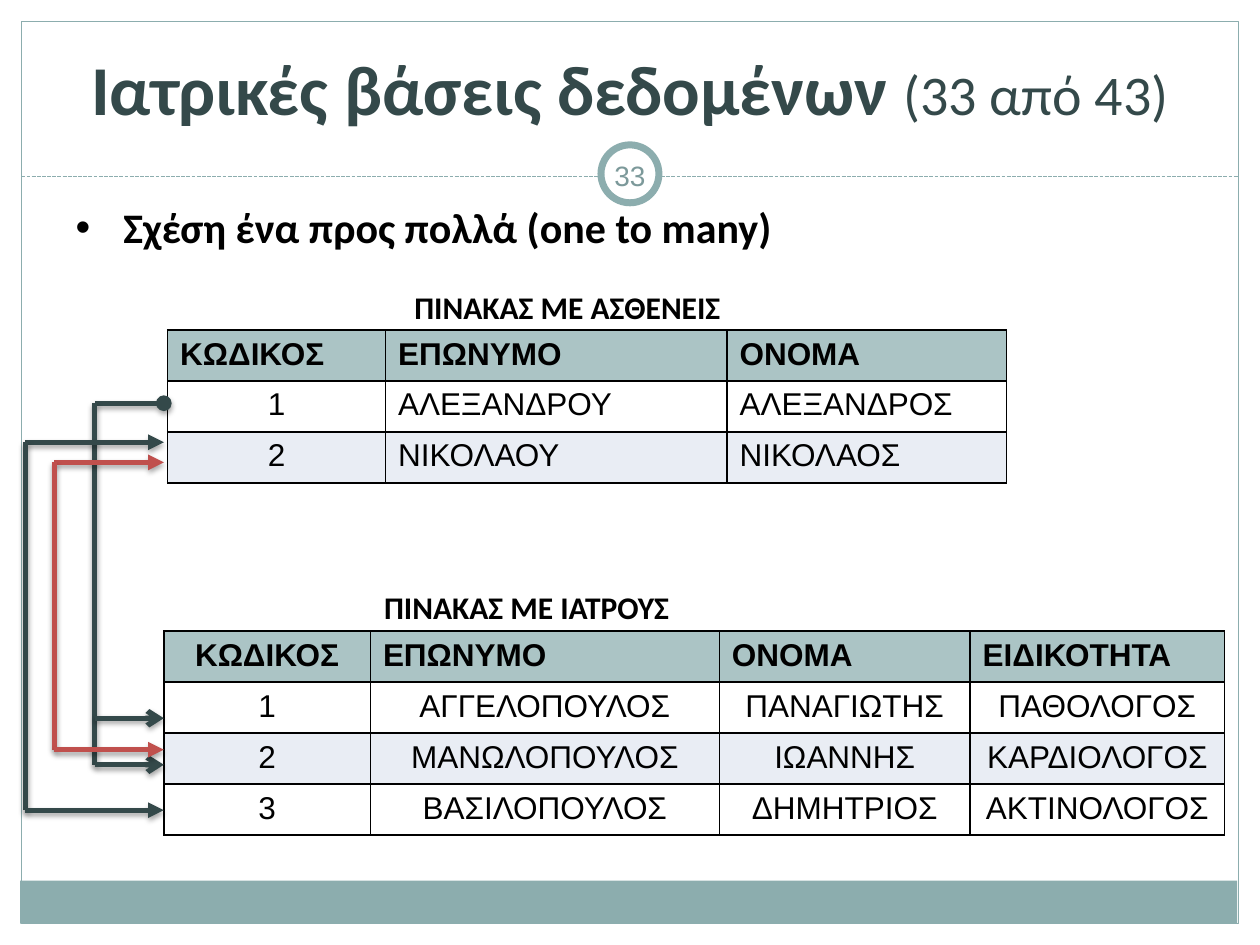
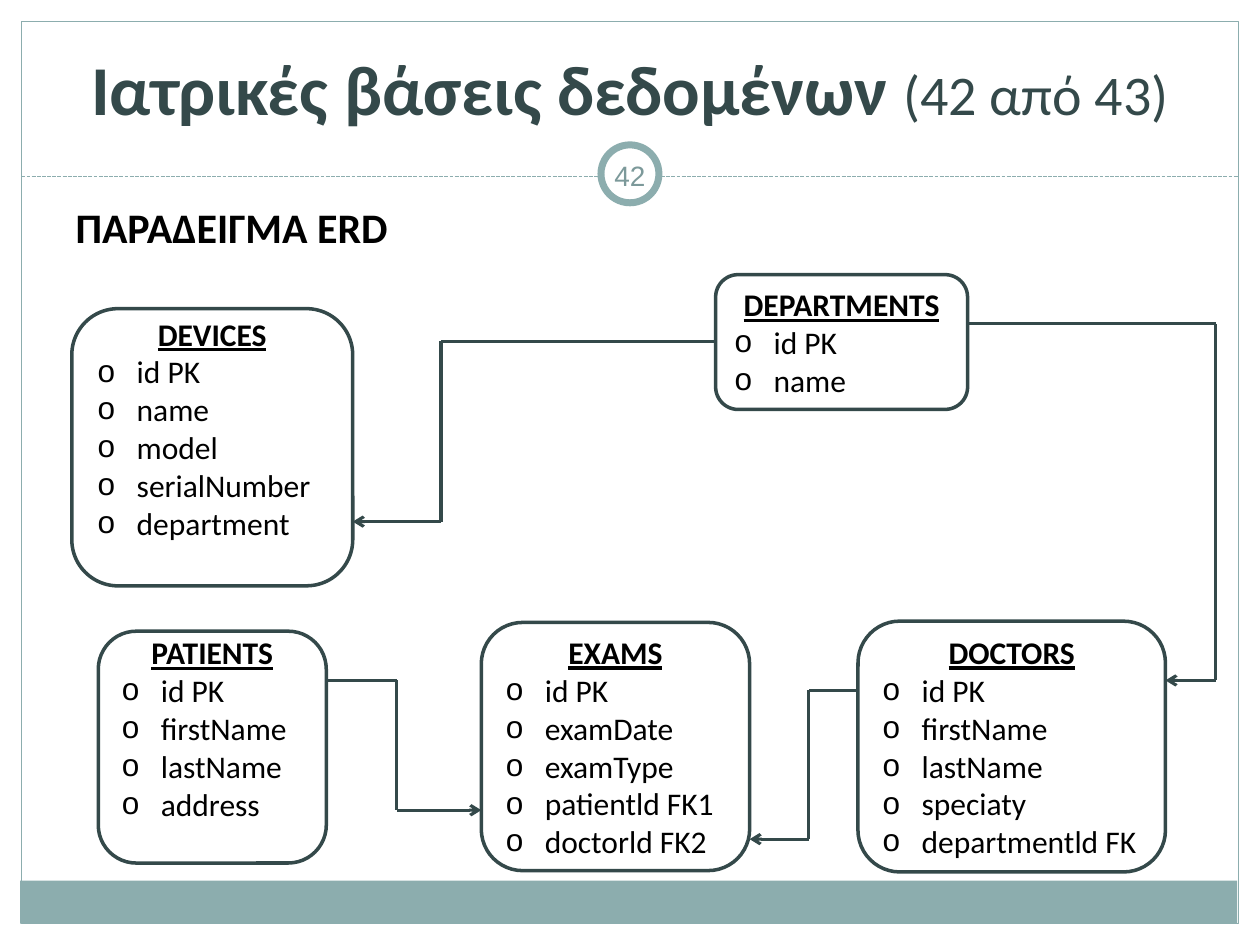
import lxml.etree
import pptx
import pptx.dml.color
import pptx.enum.dml
import pptx.enum.shapes
import pptx.enum.text
import pptx.oxml.ns
import pptx.util

inches, points, qn = pptx.util.Inches, pptx.util.Pt, pptx.oxml.ns.qn
SHAPE = pptx.enum.shapes.MSO_SHAPE
ALIGN = pptx.enum.text.PP_ALIGN
MIDDLE = pptx.enum.text.MSO_ANCHOR.MIDDLE

TEAL, DARK, RED, BLACK, WHITE = "8CADAE", "34494A", "C0504D", "000000", "FFFFFF"
HEADER, STRIPE, NUMBER = "ABC4C5", "E9EDF4", "7C999A"
EDGE, WIDTH, HEIGHT = 0.17, 10, 7.5
ROW_HEIGHT = 0.405
LINE_HEIGHT = 0.305

TITLE = "Ιατρικές βάσεις δεδομένων "
TOTAL = 43

# caption, caption place, table place, column widths, centred header columns, centred data columns, rows
TABLES = [
    ("ΠΙΝΑΚΑΣ ΜΕ ΑΣΘΕΝΕΙΣ", (3.19, 2.24), (1.33, 2.62), (1.73, 2.71, 2.22), 0, 1, [
        ("ΚΩΔΙΚΟΣ", "ΕΠΩΝΥΜΟ", "ΟΝΟΜΑ"),
        ("1", "ΑΛΕΞΑΝΔΡΟΥ", "ΑΛΕΞΑΝΔΡΟΣ"),
        ("2", "ΝΙΚΟΛΑΟΥ", "ΝΙΚΟΛΑΟΣ"),
    ]),
    ("ΠΙΝΑΚΑΣ ΜΕ ΙΑΤΡΟΥΣ", (2.95, 4.62), (1.3, 5.01), (1.64, 2.77, 1.99, 2.02), 1, 4, [
        ("ΚΩΔΙΚΟΣ", "ΕΠΩΝΥΜΟ", "ΟΝΟΜΑ", "ΕΙΔΙΚΟΤΗΤΑ"),
        ("1", "ΑΓΓΕΛΟΠΟΥΛΟΣ", "ΠΑΝΑΓΙΩΤΗΣ", "ΠΑΘΟΛΟΓΟΣ"),
        ("2", "ΜΑΝΩΛΟΠΟΥΛΟΣ", "ΙΩΑΝΝΗΣ", "ΚΑΡΔΙΟΛΟΓΟΣ"),
        ("3", "ΒΑΣΙΛΟΠΟΥΛΟΣ", "ΔΗΜΗΤΡΙΟΣ", "ΑΚΤΙΝΟΛΟΓΟΣ"),
    ]),
]
# x of the shared vertical, y at the patient, y at the doctor, colour, start head, end head
TABLE_X = 1.3
TABLE_LINKS = [
    (0.75, 3.2, 6.07, DARK, "oval", "arrow"),
    (0.43, 3.67, 5.95, RED, "triangle", "triangle"),
    (0.2, 3.51, 6.43, DARK, "triangle", "triangle"),
]
BRANCH = ((0.75, 5.7), (TABLE_X, 5.7))

# entity: place, free lines at the bottom, fields
ENTITIES = {
    "DEVICES": ((0.57, 2.45, 2.23, 2.2), 1,
                ["id PK", "name", "model", "serialNumber", "department"]),
    "DOCTORS": ((6.81, 4.93, 2.44, 1.99), 0,
                ["id PK", "firstName", "lastName", "speciaty", "departmentld FK"]),
    "EXAMS": ((3.82, 4.94, 2.13, 1.97), 0,
              ["id PK", "examDate", "examType", "patientld FK1", "doctorld FK2"]),
    "PATIENTS": ((0.78, 5.01, 1.81, 1.84), 1,
                 ["id PK", "firstName", "lastName", "address"]),
    "DEPARTMENTS": ((5.68, 2.18, 2, 1.07), 0, ["id PK", "name"]),
}
# source, its side, y; x of the vertical; target, its side, y
RELATIONS = [
    ("DEPARTMENTS", "right", 2.57, 9.65, "DOCTORS", "right", 5.4),
    ("DEPARTMENTS", "left", 2.71, 3.5, "DEVICES", "right", 4.14),
    ("PATIENTS", "right", 5.4, 3.15, "EXAMS", "left", 6.43),
    ("DOCTORS", "left", 5.48, 6.42, "EXAMS", "right", 6.66),
]


def rgb(hex_string):
    return pptx.dml.color.RGBColor.from_string(hex_string)


def place(shape, *box):
    shape.left, shape.top, shape.width, shape.height = map(inches, box)


def sub(parent, tag, **attributes):
    return lxml.etree.SubElement(parent, qn(tag), attributes)


def style(font, size, color=BLACK, bold=False, name="Calibri"):
    font.size, font.bold, font.name = points(size), bold, name
    font.color.rgb = rgb(color)


def set_bullet(paragraph, char=None, indent=0.0):
    properties = paragraph._p.get_or_add_pPr()
    properties.set("marL", str(inches(indent)))
    properties.set("indent", str(-inches(indent)))
    if char:
        sub(properties, "a:buFont", typeface="Arial")
        sub(properties, "a:buChar", char=char)
    else:
        sub(properties, "a:buNone")


def add_preset(slide, preset, box, fill=None, line=None, width=1.0):
    shape = slide.shapes.add_shape(preset, *map(inches, box))
    shape.shadow.inherit = False
    if fill:
        shape.fill.solid()
        shape.fill.fore_color.rgb = rgb(fill)
    else:
        shape.fill.background()
    if line:
        shape.line.color.rgb = rgb(line)
        shape.line.width = points(width)
    else:
        shape.line.fill.background()
    return shape


def add_line(slide, start, end, color, width, head=None, tail=None, shadow=False):
    connector = slide.shapes.add_connector(
        pptx.enum.shapes.MSO_CONNECTOR.STRAIGHT, *map(inches, start + end))
    connector.line.color.rgb = rgb(color)
    connector.line.width = points(width)
    for tag, kind in (("a:headEnd", head), ("a:tailEnd", tail)):
        if kind:
            sub(connector.line._get_or_add_ln(), tag, type=kind)
    effects = sub(connector._element.spPr, "a:effectLst")
    if shadow:
        outer = sub(effects, "a:outerShdw", blurRad=str(points(3.1)), dist=str(points(1.8)),
                    dir="5400000", rotWithShape="0")
        sub(sub(outer, "a:srgbClr", val=BLACK), "a:alpha", val="35000")
    return connector


def add_elbow(slide, start, bus_x, end, color, width, head=None, tail=None, shadow=False):
    """Join two points by way of a vertical line at bus_x."""
    upper, lower = (bus_x, start[1]), (bus_x, end[1])
    add_line(slide, start, upper, color, width, head=head, shadow=shadow)
    add_line(slide, upper, lower, color, width, shadow=shadow)
    add_line(slide, lower, end, color, width, tail=tail, shadow=shadow)


def add_base_slide(deck, number, heading, bullet=None, indent=0.0):
    slide = deck.slides.add_slide(deck.slide_layouts[1])
    add_preset(slide, SHAPE.RECTANGLE, (0.16, 6.99, 9.66, 0.34), fill=TEAL)
    add_preset(slide, SHAPE.RECTANGLE, (EDGE, EDGE, WIDTH - 2 * EDGE, HEIGHT - 2 * EDGE),
               line=TEAL, width=0.75)
    divider = add_line(slide, (EDGE, 1.4), (WIDTH - EDGE, 1.4), TEAL, 0.75)
    divider.line.dash_style = pptx.enum.dml.MSO_LINE.SQUARE_DOT
    add_preset(slide, SHAPE.OVAL, (4.77, 1.15, 0.46, 0.46), WHITE, TEAL, 4)

    badge = slide.shapes.add_textbox(*map(inches, (4.75, 1.15, 0.5, 0.48))).text_frame
    badge.word_wrap, badge.vertical_anchor = True, MIDDLE
    badge.margin_left = badge.margin_right = inches(0.05)
    badge.text = str(number)
    badge.paragraphs[0].alignment = ALIGN.CENTER
    style(badge.paragraphs[0].runs[0].font, 16, NUMBER, name="Arial")

    title, body = slide.placeholders
    place(title, 0.5, 0.2, 9, 0.99)
    place(body, 0.5, 1.55, 9, 5.35)
    for holder in (title, body):
        holder.text_frame.auto_size = pptx.enum.text.MSO_AUTO_SIZE.NONE
    title.text_frame.text = TITLE
    title.text_frame.vertical_anchor = MIDDLE
    line = title.text_frame.paragraphs[0]
    line.alignment = ALIGN.CENTER
    line.add_run().text = f"({number} από {TOTAL})"
    style(line.runs[0].font, 40, DARK, True)
    style(line.runs[1].font, 32, DARK)

    body.text_frame.text = heading
    opening = body.text_frame.paragraphs[0]
    set_bullet(opening, bullet, indent)
    opening.space_before = points(0)
    style(opening.runs[0].font, 24, bold=True)
    return slide


def border_cell(cell):
    properties = cell._tc.get_or_add_tcPr()
    for index, side in enumerate(("a:lnL", "a:lnR", "a:lnT", "a:lnB")):
        line = sub(properties, side, w=str(points(1)))
        sub(sub(line, "a:solidFill"), "a:srgbClr", val=BLACK)
        properties.insert(index, line)


def add_captioned_table(slide, caption, caption_at, table_at, widths,
                        centred_heads, centred_data, rows):
    label = slide.shapes.add_textbox(*map(inches, caption_at + (3.5, 0.4))).text_frame
    label.word_wrap = True
    label.text = caption
    style(label.paragraphs[0].runs[0].font, 18, bold=True)

    table = slide.shapes.add_table(
        len(rows), len(widths),
        *map(inches, table_at + (sum(widths), ROW_HEIGHT * len(rows)))).table
    table.first_row = table.horz_banding = False
    for column, width in zip(table.columns, widths):
        column.width = inches(width)
    for r, row in enumerate(rows):
        table.rows[r].height = inches(ROW_HEIGHT)
        for c, value in enumerate(row):
            cell = table.cell(r, c)
            cell.text = value
            paragraph = cell.text_frame.paragraphs[0]
            centred = centred_data if r else centred_heads
            paragraph.alignment = ALIGN.CENTER if c < centred else ALIGN.LEFT
            style(paragraph.runs[0].font, 18, bold=r == 0, name="Arial")
            cell.fill.solid()
            cell.fill.fore_color.rgb = rgb(HEADER if r == 0 else WHITE if r % 2 else STRIPE)
            border_cell(cell)


def add_entity(slide, name, box, free_lines, fields):
    frame = add_preset(slide, SHAPE.ROUNDED_RECTANGLE, box, line=DARK, width=2).text_frame
    frame.word_wrap, frame.vertical_anchor = True, MIDDLE
    frame.margin_bottom = inches(0.05 + free_lines * LINE_HEIGHT)
    frame.text = "\n".join([name] + fields)
    heading, *items = frame.paragraphs
    heading.alignment = ALIGN.CENTER
    style(heading.runs[0].font, 18, bold=True)
    heading.runs[0].font.underline = True
    for item in items:
        item.alignment = ALIGN.LEFT
        set_bullet(item, "o", 0.31)
        style(item.runs[0].font, 18)


def side_x(entity, side):
    left, _, width, _ = ENTITIES[entity][0]
    return left + (width if side == "right" else 0)


def main():
    deck = pptx.Presentation()
    deck.slide_width, deck.slide_height = inches(WIDTH), inches(HEIGHT)

    one_to_many = add_base_slide(deck, 33, "Σχέση ένα προς πολλά (one to many)", "•", 0.38)
    for table in TABLES:
        add_captioned_table(one_to_many, *table)
    for bus_x, patient_y, doctor_y, color, head, tail in TABLE_LINKS:
        add_elbow(one_to_many, (TABLE_X, patient_y), bus_x, (TABLE_X, doctor_y),
                  color, 3, head, tail, shadow=True)
    add_line(one_to_many, *BRANCH, DARK, 3, tail="arrow", shadow=True)

    diagram = add_base_slide(deck, 42, "ΠΑΡΑΔΕΙΓΜΑ ERD")
    for name, entity in ENTITIES.items():
        add_entity(diagram, name, *entity)
    for source, source_side, source_y, bus_x, target, target_side, target_y in RELATIONS:
        add_elbow(diagram, (side_x(source, source_side), source_y), bus_x,
                  (side_x(target, target_side), target_y), DARK, 1.75, tail="arrow")

    deck.save("out.pptx")


if __name__ == "__main__":
    main()
